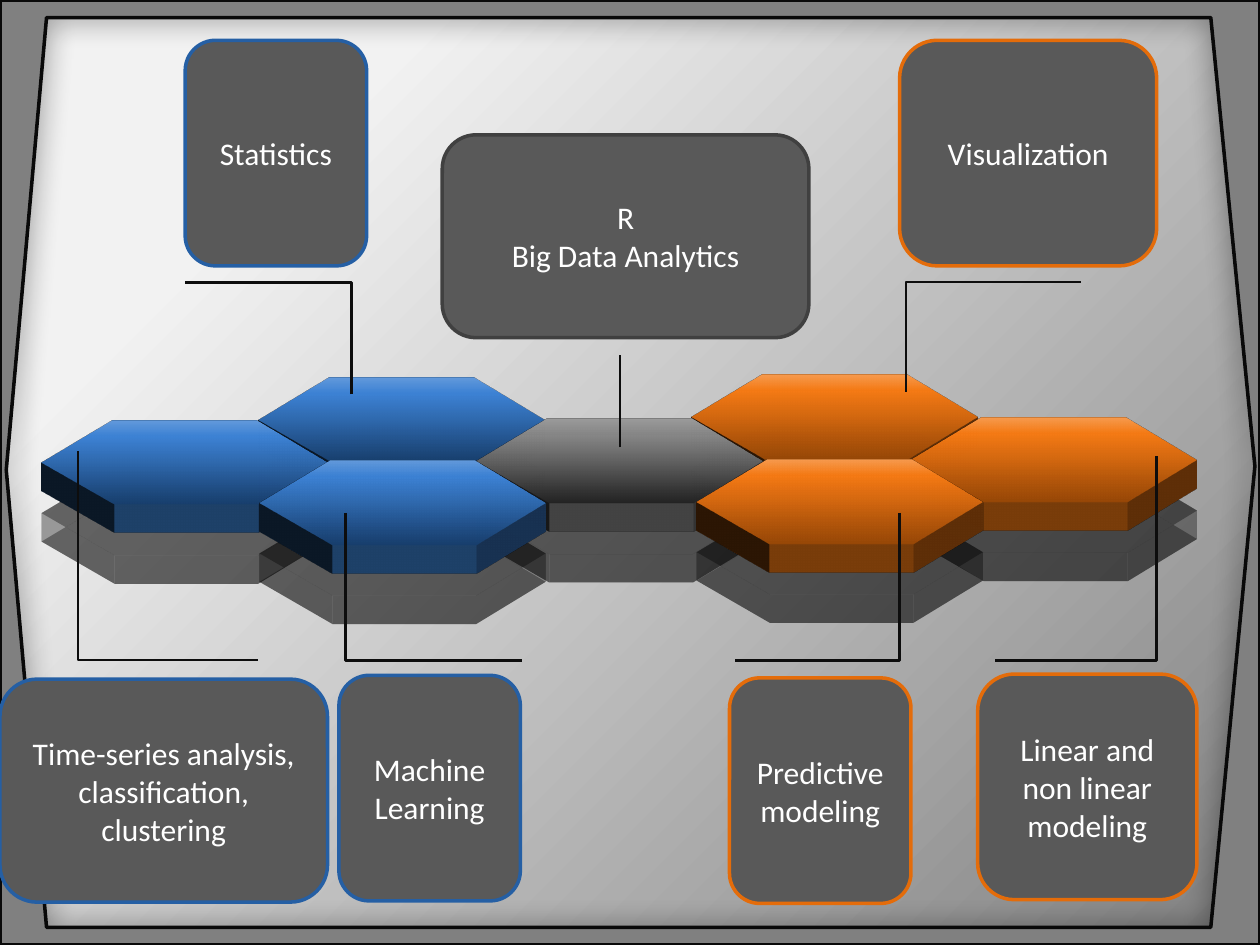
from pptx import Presentation
from pptx.dml.color import RGBColor
from pptx.enum.shapes import MSO_CONNECTOR, MSO_SHAPE
from pptx.enum.text import MSO_ANCHOR, PP_ALIGN
from pptx.oxml import parse_xml
from pptx.oxml.ns import nsdecls, qn
from pptx.util import Inches, Pt

BLUE = [(0, "183F6E"), (80, "3D82D4"), (100, "639ADC")]
ORANGE = [(0, "984807"), (80, "F57A15"), (100, "F79B4F")]
GRAY = [(0, "242424"), (79, "868686"), (100, "9B9B9B")]
BACK = [(0, "808080"), (80, "F2F2F2"), (100, "F2F2F2")]
BORDER = [(0, 0), (10, 0), (10, 7.5), (0, 7.5)]
WINDOW = [(0.37, 0.14), (0.05, 3.73), (0.37, 7.36), (9.61, 7.36), (9.96, 3.7), (9.61, 0.14)]
HEXAGON = [(0, 0.98), (0.56, 0), (1.71, 0), (2.27, 0.98), (1.72, 1.96), (0.58, 1.96)]
TILES = [
    (2.05, 2.35, BLUE), (5.49, 2.33, ORANGE), (3.78, 2.68, GRAY), (7.23, 2.67, ORANGE),
    (0.33, 2.69, BLUE), (2.06, 3.01, BLUE), (5.53, 3, ORANGE),
]
LABELS = [
    (["Time-series analysis, classification, clustering"], (0, 5.39, 2.6, 1.77), "255FA4",
     (0.62, 3.58), (2.05, 5.24)),
    (["Machine Learning"], (2.69, 5.36, 1.44, 1.79), "255FA4", (2.74, 4.07), (4.14, 5.24)),
    (["Predictive modeling"], (5.79, 5.38, 1.44, 1.79), "E46C0A", (7.14, 4.07), (5.83, 5.24)),
    (["Linear and non linear modeling"], (7.76, 5.35, 1.74, 1.79), "E46C0A",
     (9.18, 3.62), (7.9, 5.24)),
    (["Statistics"], (1.47, 0.32, 1.44, 1.79), "255FA4", (2.79, 3.13), (1.47, 2.24)),
    (["Visualization"], (7.14, 0.32, 2.04, 1.79), "E46C0A", (7.19, 3.11), (8.58, 2.24)),
    (["R", "Big Data Analytics"], (3.51, 1.07, 2.91, 1.61), "404040", (4.92, 3.55), (4.92, 2.82)),
]


def color(value):
    """Turn a hex string into a colour."""
    return RGBColor.from_string(value)


def node(tag, inner="", **attrs):
    """Make a drawing element from its tag, content and attributes."""
    pairs = "".join(f' {key}="{value}"' for key, value in attrs.items())
    return parse_xml(f"<a:{tag} {nsdecls('a')}{pairs}>{inner}</a:{tag}>")


def blend(fill, owner, stops):
    """Give a fill its gradient stops and return the gradient element."""
    fill.gradient()
    grad = next(owner.iter(qn("a:gradFill")))
    inner = "".join(f'<a:gs pos="{pos * 1000}"><a:srgbClr val="{tone}"/></a:gs>'
                    for pos, tone in stops)
    grad.replace(grad.find(qn("a:gsLst")), node("gsLst", inner))
    return grad


def outline(shapes, *rings):
    """Draw one closed outline from one or more rings of points."""
    first, *others = [[(Inches(x), Inches(y)) for x, y in ring] for ring in rings]
    pen = shapes.build_freeform(*first[0])
    pen.add_line_segments(first[1:])
    for ring in others:
        pen.move_to(*ring[0])
        pen.add_line_segments(ring[1:])
    return pen.convert_to_shape()


def shade(shape, alpha, blur, dist):
    """Cast a soft black shadow straight down."""
    shape.shadow.inherit = False
    tone = f'<a:srgbClr val="000000"><a:alpha val="{alpha * 1000}"/></a:srgbClr>'
    shape._element.spPr.find(qn("a:effectLst")).append(node(
        "outerShdw", tone, blurRad=Pt(blur), dist=Pt(dist), dir=5400000, rotWithShape=0))


def stroke(line, tone, width):
    """Set the colour and width of a line."""
    line.color.rgb = color(tone)
    line.width = Pt(width)


def tile(shapes, left, top, stops):
    """Draw a hexagon that lies flat and has a thickness."""
    shape = outline(shapes, [(left + x, top + y) for x, y in HEXAGON])
    blend(shape.fill, shape._element.spPr, stops)
    shape.fill.gradient_angle = 90
    shape.line.fill.background()
    shade(shape, 35, 3.1, 29)
    scene = ('<a:camera prst="orthographicFront"><a:rot lat="17400000" lon="0" rev="0"/></a:camera>'
             '<a:lightRig rig="threePt" dir="t"/>')
    shape._element.spPr.append(node("scene3d", scene))
    shape._element.spPr.append(node("sp3d", extrusionH=Inches(0.24)))


def write(frame, lines, size=18, font="Calibri", tone="FFFFFF"):
    """Write centred lines, one paragraph each."""
    frame.word_wrap = True
    frame.vertical_anchor = MSO_ANCHOR.MIDDLE
    for index, text in enumerate(lines):
        para = frame.add_paragraph() if index else frame.paragraphs[0]
        para.alignment = PP_ALIGN.CENTER
        run = para.add_run()
        run.text = text
        run.font.size, run.font.name = Pt(size), font
        run.font.color.rgb = color(tone)


def label(shapes, lines, place, edge, start, end):
    """Draw a box together with the line that leads to its tile."""
    group = shapes.add_group_shape().shapes
    straight = start[0] == end[0]
    kind = MSO_CONNECTOR.STRAIGHT if straight else MSO_CONNECTOR.ELBOW
    lead = group.add_connector(kind, *map(Inches, start + end))
    stroke(lead.line, "0D0D0D", 1.5)
    props = lead._element.spPr
    props.append(node("effectLst"))
    if not straight:
        guides = props.find(qn("a:prstGeom")).get_or_add_avLst()
        guides.append(node("gd", name="adj1", fmla="val 0"))
    box = group.add_shape(MSO_SHAPE.ROUNDED_RECTANGLE, *map(Inches, place))
    box.shadow.inherit = False
    box.fill.solid()
    box.fill.fore_color.rgb = color("595959")
    stroke(box.line, edge, 2)
    write(box.text_frame, lines)


def main():
    """Build the slide and save it."""
    deck = Presentation()
    deck.slide_width, deck.slide_height = Inches(10), Inches(7.5)
    slide = deck.slides.add_slide(deck.slide_layouts[6])
    grad = blend(slide.background.fill, slide._element, BACK)
    focus = '<a:fillToRect l="100000" t="100000"/>'
    grad.replace(grad.find(qn("a:lin")), node("path", focus, path="circle"))
    frame = outline(slide.shapes, WINDOW, BORDER)
    frame.fill.solid()
    frame.fill.fore_color.rgb = color("808080")
    stroke(frame.line, "090909", 2)
    shade(frame, 40, 18, 0)
    for item in TILES:
        tile(slide.shapes, *item)
    for item in LABELS:
        label(slide.shapes, *item)
    deck.save("out.pptx")


if __name__ == "__main__":
    main()
